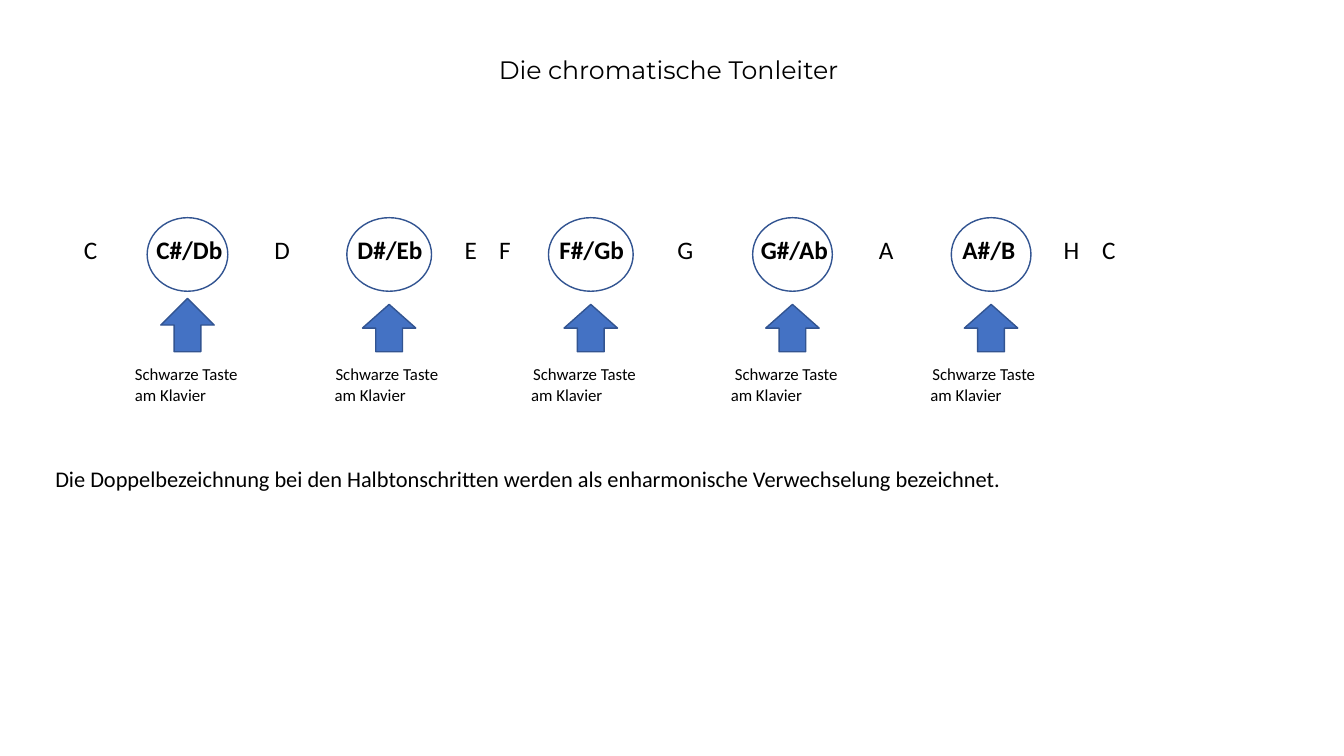
from dataclasses import dataclass

from lxml import etree
from pptx import Presentation
from pptx import util as u
from pptx.dml.color import RGBColor
from pptx.enum import shapes, text
from pptx.oxml import ns

HUES = {"ink": "000000", "fill": "4472C4", "line": "325491"}
LEFT, INSET = 0.45, 0.1
FOOT = 3.49


@dataclass
class Stop:
    word: str
    at: float
    bold: bool = False


@dataclass
class Line:
    stops: list[Stop]
    size: int
    gap: float = 0
    font: str = "Calibri"
    tab: str = ""
    center: bool = False


@dataclass
class Key:
    mid: float
    width: float
    top: float = 3.02


KEYS = [Key(1.86, 0.8, top=2.96), Key(3.86, 0.84), Key(5.86, 0.84),
        Key(7.86, 0.79), Key(9.83, 0.79)]
NOTES = [
    Stop("C", 0.9), Stop("C#/Db", 1.88, True), Stop("D", 2.8),
    Stop("D#/Eb", 3.87, True), Stop("E", 4.67), Stop("F", 5.01),
    Stop("F#/Gb", 5.87, True), Stop("G", 6.8), Stop("G#/Ab", 7.88, True),
    Stop("A", 8.79), Stop("A#/B", 9.81, True), Stop("H", 10.63), Stop("C", 11),
]
UPPER = [1.34, 3.33, 5.29, 7.29, 9.25]
LOWER = [1.34, 3.32, 5.27, 7.25, 9.23]
REMARK = ("Die Doppelbezeichnung bei den Halbtonschritten werden als "
          "enharmonische Verwechselung bezeichnet.")
LINES = [
    Line([Stop("Die chromatische Tonleiter ", 0)], 18, font="Montserrat", center=True),
    Line(NOTES, 18, gap=107, tab="ctr"),
    Line([Stop("Schwarze Taste", x) for x in UPPER], 12, gap=71, tab="l"),
    Line([Stop("am Klavier", x) for x in LOWER], 12, gap=0.7, tab="l"),
    Line([Stop(REMARK, 0)], 16, gap=43),
]

deck = Presentation()
deck.slide_width, deck.slide_height = u.Inches(13.33), u.Inches(7.5)
slide = deck.slides.add_slide(deck.slide_layouts[6])


def hue(name: str) -> RGBColor:
    return RGBColor.from_string(HUES[name])


def write(frame, lines: list[Line]) -> None:
    for i, line in enumerate(lines):
        para = frame.paragraphs[0] if i == 0 else frame.add_paragraph()
        para.alignment = text.PP_ALIGN.CENTER if line.center else text.PP_ALIGN.LEFT
        para.space_before = u.Pt(line.gap)
        # Tab stops place the words of a line
        if line.tab:
            tabs = etree.SubElement(para._p.get_or_add_pPr(), ns.qn("a:tabLst"))
            for stop in line.stops:
                place = u.Inches(stop.at - LEFT - INSET)
                etree.SubElement(tabs, ns.qn("a:tab"), pos=str(place), algn=line.tab)
        para.font.name, para.font.size = line.font, u.Pt(line.size)
        para.font.color.rgb = hue("ink")
        for stop in line.stops:
            run = para.add_run()
            run.text = ("\t" if line.tab else "") + stop.word
            run.font.bold = stop.bold


def draw(kind: shapes.MSO_SHAPE, mid: float, top: float, width: float,
         height: float, solid: bool) -> None:
    shape = slide.shapes.add_shape(
        kind, *map(u.Inches, (mid - width / 2, top, width, height)))
    shape.shadow.inherit = False
    if solid:
        shape.fill.solid()
        shape.fill.fore_color.rgb = hue("fill")
    else:
        shape.fill.background()
    shape.line.color.rgb = hue("line")
    shape.line.width = u.Pt(1)


# Circles around the black keys
for key in reversed(KEYS):
    draw(shapes.MSO_SHAPE.OVAL, key.mid, 2.16, key.width, 0.73, solid=False)

# Title, scale, captions and remark
box = slide.shapes.add_textbox(*map(u.Inches, (LEFT, 0.49, 12.43, 6.16)))
box.text_frame.word_wrap = True
write(box.text_frame, LINES)

# Arrows
for key in KEYS:
    draw(shapes.MSO_SHAPE.UP_ARROW, key.mid, key.top, 0.53, FOOT - key.top, solid=True)

deck.save("out.pptx")
